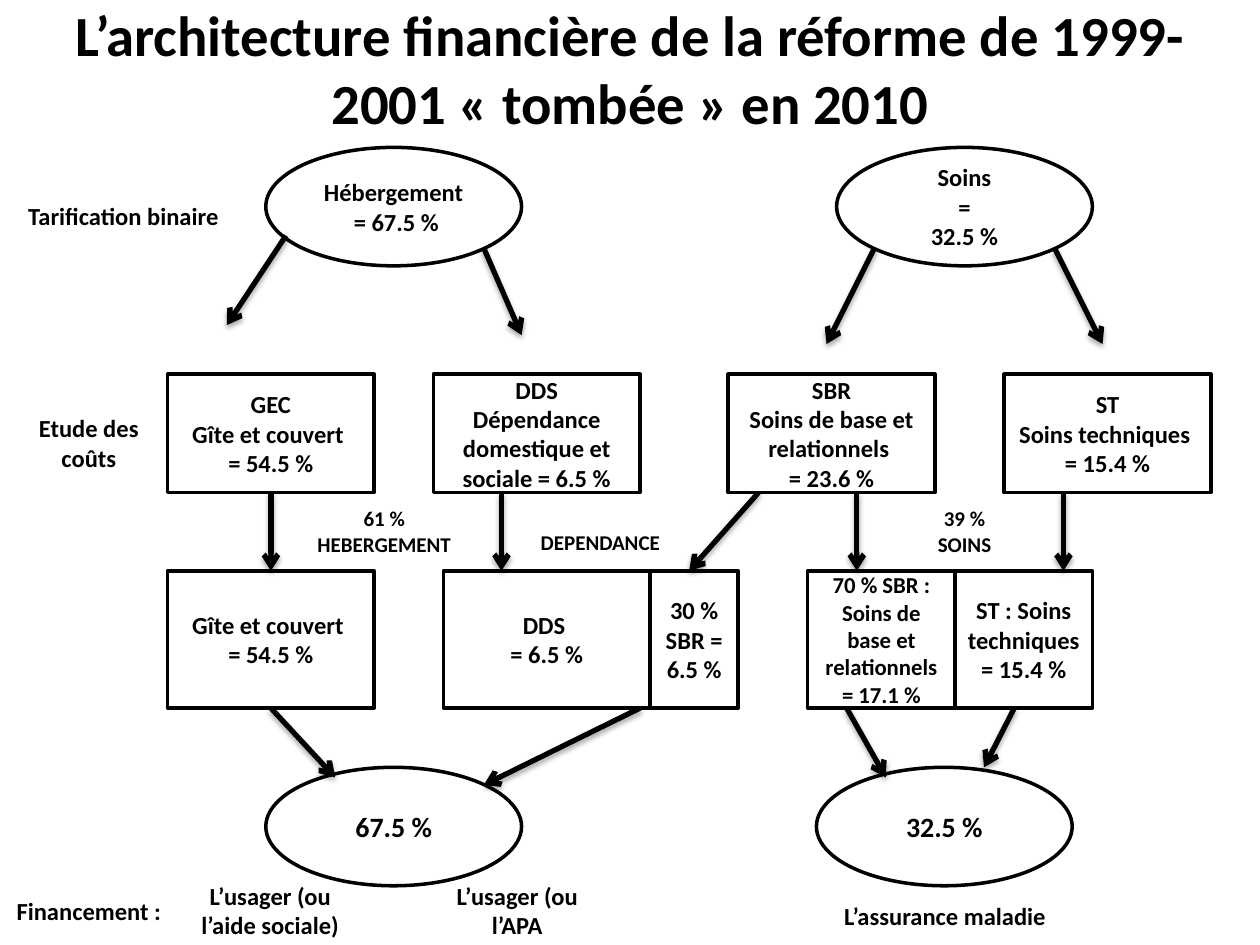
"""Build the slide on the funding of the 1999-2001 reform."""
from lxml import etree
from pptx import Presentation
from pptx import util as u
from pptx.dml.color import RGBColor
from pptx.enum import shapes, text
from pptx.oxml.ns import nsdecls

HUES = {"ink": "000000", "paper": "FFFFFF"}
FONT = "Calibri"
TITLE = "L’architecture financière de la réforme de 1999-2001 «\u00a0tombée\u00a0» en 2010"

# kind, top, height, size, [(left, width, lines)]
ROWS = [
    ("OVAL", 1.17, 0.94, 14, [
        (2.11, 2.03, ["Hébergement", " = 67.5 %"]),
        (6.64, 2.03, ["Soins", " = ", "32.5 %"])]),
    ("RECTANGLE", 2.97, 0.94, 14, [
        (1.33, 1.64, ["GEC", "Gîte et couvert ", "= 54.5 %"]),
        (3.44, 1.64, ["DDS", "Dépendance domestique et sociale = 6.5 %"]),
        (5.78, 1.64, ["SBR", "Soins de base et relationnels ", "= 23.6 %"]),
        (7.97, 1.64, ["ST", "Soins techniques ", "= 15.4 %"])]),
    ("RECTANGLE", 4.53, 1.09, 14, [
        (1.33, 1.64, ["Gîte et couvert ", "= 54.5 %"]),
        (3.52, 1.64, ["DDS ", "= 6.5 %"]),
        (5.16, 0.7, ["30 % SBR = 6.5 %"])]),
    ("RECTANGLE", 4.53, 1.09, 13, [
        (6.41, 1.17, ["70 % SBR : Soins de base et relationnels = 17.1 %"])]),
    ("RECTANGLE", 4.53, 1.09, 14, [
        (7.58, 1.09, ["ST : Soins techniques = 15.4 %"])]),
    ("OVAL", 6.09, 0.94, 16, [
        (2.11, 2.03, ["67.5 %"]),
        (6.48, 2.03, ["32.5 %"])]),
]
LABELS = [
    ("RECTANGLE", 1.48, 0.47, 14, [(0.08, 1.8, ["Tarification binaire"])]),
    ("RECTANGLE", 3.28, 0.47, 14, [(0.16, 1.09, ["Etude des coûts"])]),
    ("RECTANGLE", 7.03, 0.39, 14, [
        (0, 1.41, ["Financement :"]),
        (1.48, 1.33, ["L’usager (ou l’aide sociale)"]),
        (3.44, 1.33, ["L’usager (ou l’APA"])]),
    ("RECTANGLE", 7.11, 0.31, 14, [(6.56, 1.88, ["L’assurance maladie"])]),
    ("RECTANGLE", 3.98, 0.47, 12, [
        (7.11, 1.09, ["39 %", "SOINS"]),
        (2.27, 1.56, ["61 %", "HEBERGEMENT"])]),
]
LOW = ("RECTANGLE", 3.98, 0.47, 12, [(4.14, 1.25, ["DEPENDANCE"])])
SPLITS = [
    (2.27, 1.87, 1.8, 2.58), (3.84, 1.97, 4.14, 2.66),
    (6.94, 1.97, 6.56, 2.73), (8.37, 1.97, 8.75, 2.73),
]
DROPS = [(2.15, 2.15), (3.98, 3.98), (6.02, 5.47), (6.8, 6.8), (8.44, 8.44)]
MERGES = [
    (2.15, 5.62, 2.66, 6.17), (5.08, 5.62, 3.84, 6.23),
    (6.72, 5.62, 7.03, 6.17), (8.05, 5.62, 7.81, 6.09),
]
FRAME = {
    "word_wrap": True, "auto_size": text.MSO_AUTO_SIZE.NONE,
    "vertical_anchor": text.MSO_ANCHOR.MIDDLE,
    "margin_left": u.Inches(0.09), "margin_right": u.Inches(0.09),
    "margin_top": u.Inches(0.05), "margin_bottom": u.Inches(0.05),
}
SHADOW = (
    f'<a:effectLst {nsdecls("a")}><a:outerShdw blurRad="{u.Pt(3.1)}" '
    f'dist="{u.Pt(1.8)}" dir="5400000" rotWithShape="0">'
    f'<a:srgbClr val="{HUES["ink"]}"><a:alpha val="35000"/></a:srgbClr>'
    '</a:outerShdw></a:effectLst>'
)


def apply(item, values):
    for name, value in values.items():
        setattr(item, name, value)


def hue(name):
    return RGBColor.from_string(HUES[name])


def write(shape, lines, size, **extra):
    frame = shape.text_frame
    apply(frame, FRAME | extra)
    for i, line in enumerate(lines):
        para = frame.add_paragraph() if i else frame.paragraphs[0]
        para.alignment = text.PP_ALIGN.CENTER
        run = para.add_run()
        run.text = line
        apply(run.font, {"name": FONT, "size": u.Pt(size), "bold": True})
        run.font.color.rgb = hue("ink")


def stroke(line, width):
    line.color.rgb = hue("ink")
    line.width = u.Pt(width)


def draw(slide, row, edge, **extra):
    kind, top, high, size, cells = row
    for left, wide, lines in cells:
        area = map(u.Inches, (left, top, wide, high))
        box = slide.shapes.add_shape(getattr(shapes.MSO_SHAPE, kind), *area)
        box.shadow.inherit = False
        box.fill.solid()
        box.fill.fore_color.rgb = hue("paper")
        if edge:
            stroke(box.line, 2)
        else:
            box.line.fill.background()
        write(box, lines, size, **extra)


def link(slide, ends):
    line = slide.shapes.add_connector(
        shapes.MSO_CONNECTOR.STRAIGHT, *map(u.Inches, ends))
    stroke(line.line, 3)
    tip = f'<a:tailEnd {nsdecls("a")} type="arrow"/>'
    line.line._get_or_add_ln().append(etree.fromstring(tip))
    line._element.spPr.append(etree.fromstring(SHADOW))


def main():
    deck = Presentation()
    apply(deck, {"slide_width": u.Inches(10), "slide_height": u.Inches(7.5)})
    slide = deck.slides.add_slide(deck.slide_layouts[5])
    title = slide.shapes.title
    apply(title, {"left": u.Inches(0.5), "top": u.Inches(0.3),
                  "width": u.Inches(9), "height": u.Inches(0.48)})
    write(title, [TITLE], 32.4)
    for row in ROWS:
        draw(slide, row, True)
    gap = ROWS[1][1] + ROWS[1][2], ROWS[2][1]
    drops = [(start, gap[0], end, gap[1]) for start, end in DROPS]
    for ends in SPLITS + drops + MERGES:
        link(slide, ends)
    for row in LABELS:
        draw(slide, row, False)
    draw(slide, LOW, False, vertical_anchor=text.MSO_ANCHOR.BOTTOM)
    deck.save("out.pptx")


if __name__ == "__main__":
    main()
